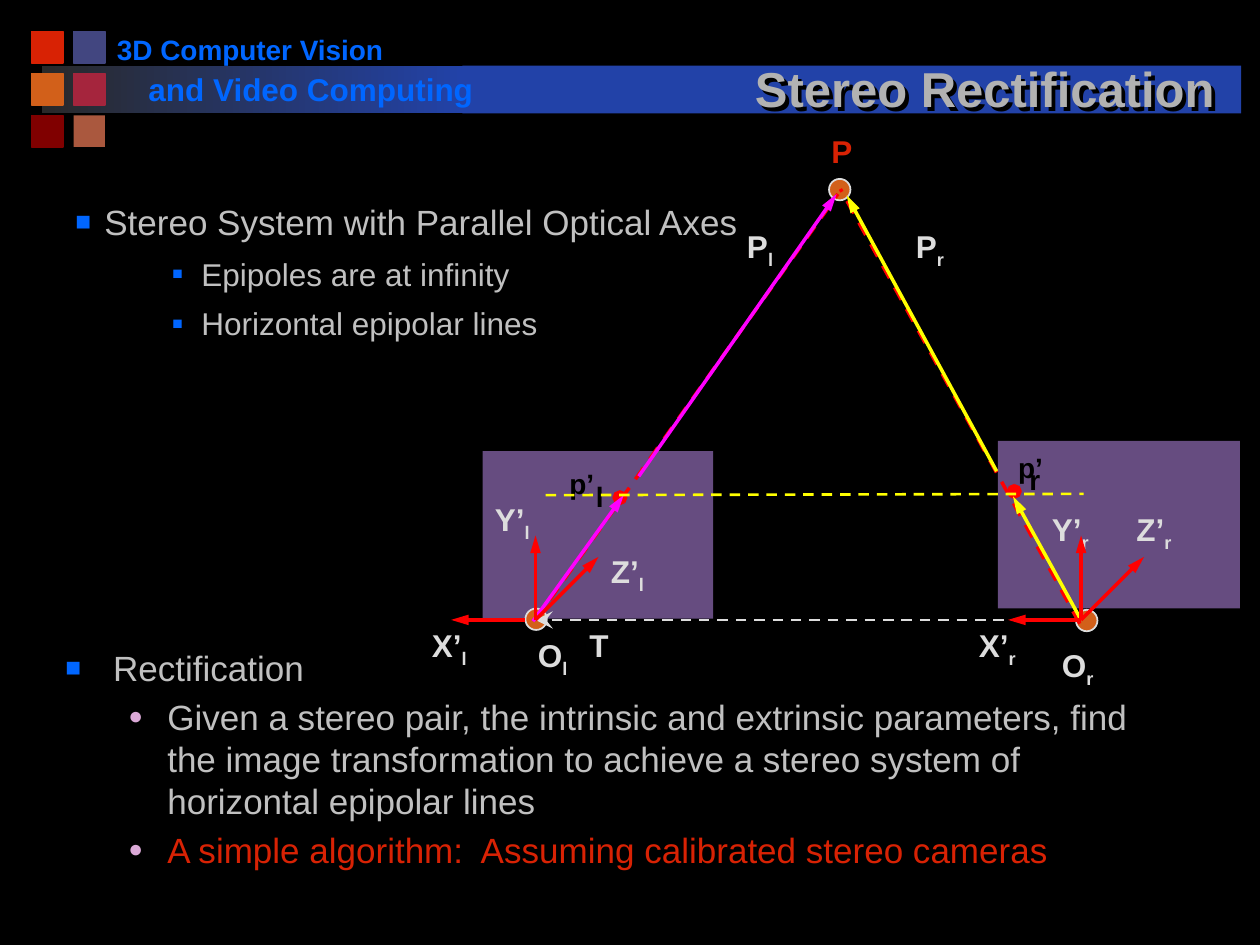
from dataclasses import dataclass
from math import cos, radians, sin

from lxml import etree
from pptx import Presentation
from pptx import util as u
from pptx.dml.color import RGBColor
from pptx.enum import dml, shapes, text
from pptx.oxml import ns

BLACK = RGBColor(0x00, 0x00, 0x00)
CHARCOAL = RGBColor(0x29, 0x29, 0x29)
NAVY = RGBColor(0x22, 0x42, 0xA8)
BLUE = RGBColor(0x00, 0x66, 0xFF)
INDIGO = RGBColor(0x42, 0x46, 0x80)
CRIMSON = RGBColor(0xA5, 0x25, 0x3D)
MAROON = RGBColor(0x80, 0x00, 0x00)
SCARLET = RGBColor(0xD8, 0x22, 0x04)
ORANGE = RGBColor(0xD2, 0x60, 0x1A)
CLAY = RGBColor(0xAA, 0x58, 0x3E)
LILAC = RGBColor(0xCC, 0x99, 0xFF)
PINK = RGBColor(0xDB, 0xA9, 0xD7)
RED = RGBColor(0xFF, 0x00, 0x00)
MAGENTA = RGBColor(0xFF, 0x00, 0xFF)
YELLOW = RGBColor(0xFF, 0xFF, 0x00)
PALE = RGBColor(0xDD, 0xDD, 0xDD)
SILVER = RGBColor(0xC0, 0xC0, 0xC0)
GREY = RGBColor(0xB2, 0xB2, 0xB2)

RECT = shapes.MSO_SHAPE.RECTANGLE
OVAL = shapes.MSO_SHAPE.OVAL
Point = tuple[float, float]


@dataclass
class Label:
    words: str
    left: float
    top: float
    width: float = 0.58
    height: float = 0.4
    sub: str = ""
    size: float = 18
    color: RGBColor = PALE
    inset: bool = True
    wrap: bool = True


@dataclass
class Ray:
    start: Point
    end: Point
    color: RGBColor
    width: float = 2
    dashed: bool = False
    head: str = ""
    tail: str = ""


@dataclass
class Item:
    words: str
    size: float
    margin: float
    hang: float
    before: float
    bullet: str
    bullet_color: RGBColor
    bullet_percent: int
    spacing: float
    color: RGBColor = SILVER


def add_xml(parent, tag: str, **attributes: str):
    return etree.SubElement(parent, ns.qn(tag), attributes)


def add_box(page, left: float, top: float, width: float, height: float, wrap: bool = True):
    box = page.shapes.add_textbox(*map(u.Inches, (left, top, width, height)))
    box.text_frame.word_wrap = wrap
    return box


def add_span(para, words: str, size: float, color: RGBColor, bold: bool = False):
    span = para.add_run()
    span.text = words
    span.font.size, span.font.bold, span.font.name = u.Pt(size), bold, "Arial"
    span.font.color.rgb = color
    return span


def add_label(page, label: Label) -> None:
    frame = add_box(page, label.left, label.top, label.width, label.height, label.wrap).text_frame
    if not label.inset:
        frame.margin_left = frame.margin_right = frame.margin_top = frame.margin_bottom = 0
    para = frame.paragraphs[0]
    add_span(para, label.words, label.size, label.color, True)
    if label.sub:
        span = add_span(para, label.sub, label.size, label.color, True)
        span.font._element.set("baseline", "-25000")


def add_list(page, place: tuple[float, ...], items: list[Item]) -> None:
    frame = add_box(page, *place).text_frame
    for index, item in enumerate(items):
        para = frame.add_paragraph() if index else frame.paragraphs[0]
        para.space_before, para.line_spacing = u.Pt(item.before), item.spacing
        props = para._p.get_or_add_pPr()
        props.set("marL", str(u.Inches(item.margin)))
        props.set("indent", str(u.Inches(-item.hang)))
        add_xml(add_xml(props, "a:buClr"), "a:srgbClr", val=str(item.bullet_color))
        add_xml(props, "a:buSzPct", val=str(item.bullet_percent * 1000))
        add_xml(props, "a:buFont", typeface="Arial")
        add_xml(props, "a:buChar", char=item.bullet)
        add_span(para, item.words, item.size, item.color)


def add_solid(page, kind, place: tuple[float, ...], fill: RGBColor, line: RGBColor | None = None):
    shape = page.shapes.add_shape(kind, *map(u.Inches, place))
    shape.shadow.inherit = False
    shape.fill.solid()
    shape.fill.fore_color.rgb = fill
    if line is None:
        shape.line.fill.background()
    else:
        shape.line.color.rgb, shape.line.width = line, u.Pt(1)
    return shape


def add_ray(page, ray: Ray) -> None:
    ends = map(u.Inches, (*ray.start, *ray.end))
    line = page.shapes.add_connector(shapes.MSO_CONNECTOR.STRAIGHT, *ends)
    line.line.color.rgb, line.line.width = ray.color, u.Pt(ray.width)
    if ray.dashed:
        line.line.dash_style = dml.MSO_LINE.DASH
    stroke = line.line._get_or_add_ln()
    for tag, kind, breadth in (("a:headEnd", ray.head, "lg"), ("a:tailEnd", ray.tail, "med")):
        if kind:
            add_xml(stroke, tag, type=kind, w=breadth, len="lg")
    add_xml(line._element.spPr, "a:effectLst")


def add_outline(page, points: list[Point]) -> None:
    corners = [(u.Inches(x), u.Inches(y)) for x, y in points]
    builder = page.shapes.build_freeform(*corners[0])
    builder.add_line_segments(corners[1:])
    shape = builder.convert_to_shape()
    shape.shadow.inherit = False
    shape.fill.solid()
    shape.fill.fore_color.rgb = RED
    shape.line.fill.background()


def add_dot(page, x: float, y: float) -> None:
    def corner(radius: float, step: int) -> Point:
        angle = radians(45 * step)
        return x + radius * cos(angle), y + radius * sin(angle)

    add_outline(page, [corner(0.05, step) for step in range(8)])
    for step in range(8):
        add_outline(page, [corner(0.06, step), corner(0.06, step + 1),
                           corner(0.04, step + 1), corner(0.04, step)])


def main() -> None:
    deck = Presentation()
    deck.slide_width, deck.slide_height = u.Inches(10), u.Inches(7.5)
    page = deck.slides.add_slide(deck.slide_layouts[6])
    page.background.fill.solid()
    page.background.fill.fore_color.rgb = BLACK

    # Header band and colour squares
    fade = add_solid(page, RECT, (0.33, 0.52, 3.35, 0.38), NAVY)
    fade.fill.gradient()
    fade.fill.gradient_angle = 0
    for stop, color, position in zip(fade.fill.gradient_stops, (CHARCOAL, NAVY), (0, 1)):
        stop.color.rgb, stop.position = color, position
    squares = ((SCARLET, INDIGO), (ORANGE, CRIMSON), (MAROON, CLAY))
    for row, colors in enumerate(squares):
        for column, color in enumerate(colors):
            place = (0.25 + column / 3, 0.25 + row / 3, 0.25, 0.25)
            add_solid(page, RECT, place, color, None if color == CLAY else color)
    add_solid(page, RECT, (3.67, 0.52, 6.18, 0.38), NAVY)
    add_label(page, Label("3D Computer Vision", 0.83, 0.21, 2.32, 0.37, size=16, color=BLUE, wrap=False))
    add_label(page, Label("and Video Computing", 1.08, 0.51, 2.83, color=BLUE))

    # Title, whose box casts the shadow of its text
    title = add_box(page, 5.67, 0.31, 4.29, 0.67)
    title.text_frame.vertical_anchor = text.MSO_ANCHOR.BOTTOM
    heading = title.text_frame.paragraphs[0]
    heading.alignment = text.PP_ALIGN.CENTER
    add_span(heading, "Stereo Rectification", 28, GREY, True)
    effects = add_xml(title._element.spPr, "a:effectLst")
    shadow = add_xml(effects, "a:outerShdw", dist="38100", dir="2700000", algn="ctr", rotWithShape="0")
    add_xml(shadow, "a:srgbClr", val=str(BLACK))

    # Rectification text
    detail = (20, 0.81, 0.31, 4, "●", PINK, 70, 1)
    add_list(page, (0.42, 5.08, 8.83, 1.92), [
        Item("Rectification", 20, 0.38, 0.38, 0, "■", BLUE, 75, 1),
        Item("Given a stereo pair, the intrinsic and extrinsic parameters, find the image "
             "transformation to achieve a stereo system of horizontal epipolar lines", *detail),
        Item("A simple algorithm:  Assuming calibrated stereo cameras", *detail, color=SCARLET)])

    # Image planes and image points
    for place in ((7.92, 3.5, 1.92, 1.33), (3.83, 3.58, 1.83, 1.33)):
        plane = add_solid(page, RECT, place, LILAC)
        tint = plane._element.spPr.find(ns.qn("a:solidFill"))[0]
        add_xml(tint, "a:alpha", val="50000")
    for x, y in ((8.05, 3.9), (4.92, 3.95)):
        add_dot(page, x, y)
    for words, left, top, width, wrap in (("p’", 4.52, 3.7, 0.2, False), ("l", 4.73, 3.81, 0.06, False),
                                          ("p’", 8.08, 3.58, 0.33, True), ("r", 8.17, 3.67, 0.09, False)):
        add_label(page, Label(words, left, top, width, 0.27, size=16, color=BLACK, inset=False, wrap=wrap))

    # Scene point and camera centres
    add_label(page, Label("P", 6.5, 1, 0.37, color=SCARLET, wrap=False))
    for left, top in ((4.17, 4.83), (8.54, 4.84), (6.58, 1.42)):
        add_solid(page, OVAL, (left, top, 0.17, 0.17), ORANGE, PALE)

    # Projection rays
    add_ray(page, Ray((4.25, 4.92), (6.65, 1.54), RED, dashed=True))
    add_ray(page, Ray((8.57, 4.95), (6.67, 1.5), RED, dashed=True))
    for start, end, color in (((4.23, 4.93), (4.95, 3.93), MAGENTA), ((5.07, 3.78), (6.64, 1.54), MAGENTA),
                              ((8.58, 4.92), (8.04, 3.94), YELLOW), ((7.91, 3.74), (6.72, 1.55), YELLOW)):
        add_ray(page, Ray(start, end, color, tail="triangle"))

    # Vector and axis names
    for words, sub, left, top in (("O", "l", 4.17, 5), ("O", "r", 8.33, 5.08), ("X’", "r", 7.67, 4.92),
                                  ("P", "l", 5.83, 1.75), ("P", "r", 7.17, 1.75), ("Z’", "l", 4.75, 4.33),
                                  ("Y’", "l", 3.83, 3.92), ("Y’", "r", 8.25, 4), ("T", "", 4.58, 4.92),
                                  ("X’", "l", 3.33, 4.92), ("Z’", "r", 8.92, 4)):
        add_label(page, Label(words, left, top, sub=sub))

    # Baseline, camera axes and epipolar line
    add_ray(page, Ray((4.25, 4.92), (8.58, 4.92), PALE, 1.5, True, head="stealth"))
    for start, end in (((4.17, 4.92), (3.58, 4.92)), ((8.58, 4.92), (8, 4.92))):
        add_ray(page, Ray(start, end, RED, tail="triangle"))
    for x in (4.25, 8.58):
        for end in ((x, 4.25), (x + 0.5, 4.42)):
            add_ray(page, Ray((x, 4.92), end, RED, tail="triangle"))
    add_ray(page, Ray((4.33, 3.93), (8.6, 3.92), YELLOW, 1.5, True))

    # Parallel axes text
    point = (18, 1, 0.23, 9, "■", BLUE, 55, 0.9)
    add_list(page, (0.5, 1.58, 5.5, 1.24), [
        Item("Stereo System with Parallel Optical Axes", 20, 0.23, 0.23, 0, "■", BLUE, 75, 0.9),
        Item("Epipoles are at infinity", *point),
        Item("Horizontal epipolar lines", *point)])
    deck.save("out.pptx")


if __name__ == "__main__":
    main()
